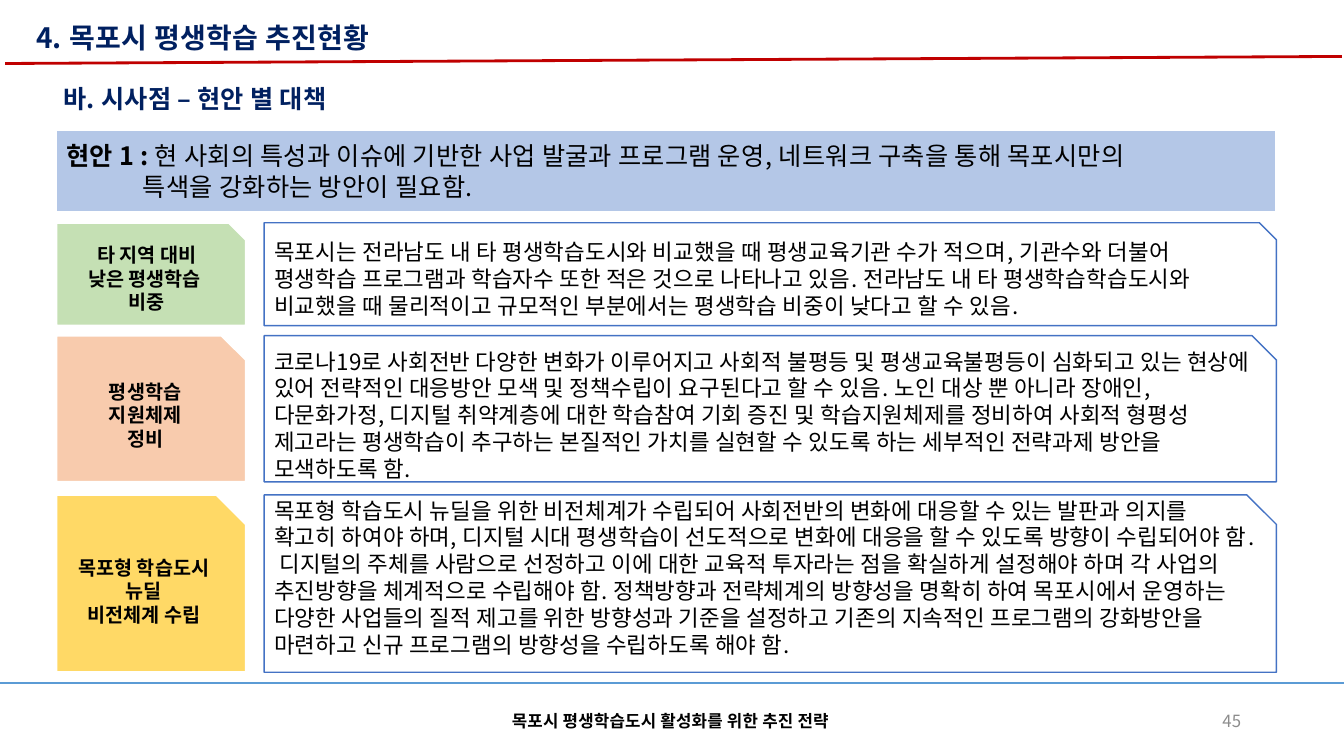
from dataclasses import dataclass

from lxml.etree import SubElement
from pptx import Presentation
from pptx.dml.color import RGBColor
from pptx.enum.shapes import MSO_CONNECTOR, MSO_SHAPE
from pptx.enum.text import MSO_ANCHOR as Anchor, PP_ALIGN as Align
from pptx.oxml.ns import qn
from pptx.slide import Slide
from pptx.text.text import TextFrame
from pptx.util import Pt

EMU_PER_PX = 9144


@dataclass(frozen=True)
class Theme:
    font: str = "Noto Sans CJK KR"
    black: str = "000000"
    white: str = "FFFFFF"
    navy: str = "002060"
    gray: str = "8C8C8C"
    red: str = "C00000"
    sky: str = "5B9BD5"
    outline: str = "4472C4"
    banner: str = "B4C7E7"
    green: str = "C5E0B4"
    peach: str = "F8CBAD"
    yellow: str = "FFD966"
    title: int = 20
    heading: int = 18
    body: int = 16
    label: int = 14
    footer: int = 12


THEME = Theme()


@dataclass(frozen=True)
class Box:
    left: int
    top: int
    width: int
    height: int

    def emu(self) -> tuple[int, int, int, int]:
        return px(self.left), px(self.top), px(self.width), px(self.height)


@dataclass(frozen=True)
class Style:
    size: int
    color: str = THEME.black
    bold: bool | None = False
    align: Align = Align.LEFT
    anchor: Anchor = Anchor.MIDDLE
    tracking: float = 1.15


@dataclass(frozen=True)
class Label:
    box: Box
    text: str
    style: Style


@dataclass(frozen=True)
class Rule:
    start: tuple[int, int]
    end: tuple[int, int]
    color: str
    width: float


@dataclass(frozen=True)
class Issue:
    top: int
    height: int
    fill: str
    label: tuple[str, ...]
    body: str
    bottom_inset: int = 5


def px(value: int) -> int:
    return value * EMU_PER_PX


def write(frame: TextFrame, lines: tuple[str, ...], style: Style) -> None:
    frame.word_wrap = True
    frame.vertical_anchor = style.anchor
    for index, line in enumerate(lines):
        paragraph = frame.paragraphs[0] if index == 0 else frame.add_paragraph()
        if line:
            paragraph.add_run().text = line
        paragraph.alignment = style.align
        font = paragraph.font
        font.name, font.size, font.bold = THEME.font, Pt(style.size), style.bold
        font.color.rgb = RGBColor.from_string(style.color)
        defaults = paragraph._p.pPr.find(qn("a:defRPr"))
        defaults.set("spc", str(round(style.size * style.tracking)))
        SubElement(defaults, qn("a:ea")).set("typeface", THEME.font)


def add_label(slide: Slide, label: Label) -> None:
    frame = slide.shapes.add_textbox(*label.box.emu()).text_frame
    write(frame, (label.text,), label.style)


def add_panel(slide: Slide, kind: MSO_SHAPE, box: Box, fill: str,
              line: str, width: float) -> TextFrame:
    shape = slide.shapes.add_shape(kind, *box.emu())
    shape.shadow.inherit = False
    shape.fill.solid()
    shape.fill.fore_color.rgb = RGBColor.from_string(fill)
    shape.line.color.rgb = RGBColor.from_string(line)
    shape.line.width = Pt(width)
    return shape.text_frame


def add_rule(slide: Slide, rule: Rule) -> None:
    ends = [px(value) for value in (*rule.start, *rule.end)]
    connector = slide.shapes.add_connector(MSO_CONNECTOR.STRAIGHT, *ends)
    connector.line.color.rgb = RGBColor.from_string(rule.color)
    connector.line.width = Pt(rule.width)
    SubElement(connector._element.spPr, qn("a:effectLst"))


def add_issue(slide: Slide, issue: Issue) -> None:
    kind = MSO_SHAPE.SNIP_1_RECTANGLE
    label = add_panel(slide, kind, Box(56, issue.top, 188, issue.height),
                      issue.fill, THEME.white, 1.5)
    write(label, issue.label,
          Style(THEME.label, bold=True, align=Align.CENTER, tracking=0))
    body = add_panel(slide, kind, Box(262, issue.top, 1004, issue.height),
                     THEME.white, THEME.outline, 1)
    body.margin_bottom = px(issue.bottom_inset)
    write(body, (issue.body,), Style(THEME.body))


def add_banner(slide: Slide) -> None:
    frame = add_panel(slide, MSO_SHAPE.RECTANGLE, Box(56, 129, 1210, 81),
                      THEME.banner, THEME.white, 1.5)
    write(frame, ("", "특색을 강화하는 방안이 필요함."), Style(THEME.heading, bold=None))
    first, second = frame.paragraphs
    for text, bold in BANNER_RUNS:
        run = first.add_run()
        run.text, run.font.bold = text, bold
    second._p.pPr.set("marL", str(px(76)))


RULES = (
    Rule((5, 63), (1331, 56), THEME.red, 2),
    Rule((0, 678), (1333, 678), THEME.sky, 1.5),
)
LABELS = (
    Label(Box(941, 695, 300, 40), "45",
          Style(THEME.footer, THEME.gray, align=Align.RIGHT)),
    Label(Box(442, 695, 450, 40), "목포시 평생학습도시 활성화를 위한 추진 전략 ",
          Style(THEME.footer, bold=True, align=Align.CENTER)),
    Label(Box(26, 15, 587, 44), "4. 목포시 평생학습 추진현황",
          Style(THEME.title, THEME.navy, True, anchor=Anchor.TOP)),
    Label(Box(53, 78, 587, 40), "바. 시사점 – 현안 별 대책",
          Style(THEME.heading, THEME.navy, True, anchor=Anchor.TOP)),
)
BANNER_RUNS = (
    ("현안 1 : ", True),
    ("현 사회의 특성과 이슈에 기반한 사업 발굴과 프로그램 운영, 네트워크 구축을 통해 목포시만의", False),
)
ISSUES = (
    Issue(221, 102, THEME.green, ("타 지역 대비", "낮은 평생학습 ", "비중"),
          "목포시는 전라남도 내 타 평생학습도시와 비교했을 때 평생교육기관 수가 적으며, 기관수와 더불어 "
          "평생학습 프로그램과 학습자수 또한 적은 것으로 나타나고 있음. 전라남도 내 타 평생학습학습도시와 "
          "비교했을 때 물리적이고 규모적인 부분에서는 평생학습 비중이 낮다고 할 수 있음."),
    Issue(333, 145, THEME.peach, ("평생학습", "지원체제", "정비"),
          "코로나19로 사회전반 다양한 변화가 이루어지고 사회적 불평등 및 평생교육불평등이 심화되고 있는 "
          "현상에 있어 전략적인 대응방안 모색 및 정책수립이 요구된다고 할 수 있음. 노인 대상 뿐 아니라 장애인, "
          "다문화가정, 디지털 취약계층에 대한 학습참여 기회 증진 및 학습지원체제를 정비하여 사회적 형평성 "
          "제고라는 평생학습이 추구하는 본질적인 가치를 실현할 수 있도록 하는 세부적인 전략과제 방안을 "
          "모색하도록 함."),
    Issue(491, 176, THEME.yellow, ("목포형 학습도시", "뉴딜", "비전체계 수립"),
          "목포형 학습도시 뉴딜을 위한 비전체계가 수립되어 사회전반의 변화에 대응할 수 있는 발판과 의지를 "
          "확고히 하여야 하며, 디지털 시대 평생학습이 선도적으로 변화에 대응을 할 수 있도록 방향이 수립되어야 "
          "함. 디지털의 주체를 사람으로 선정하고 이에 대한 교육적 투자라는 점을 확실하게 설정해야 하며 각 "
          "사업의 추진방향을 체계적으로 수립해야 함. 정책방향과 전략체계의 방향성을 명확히 하여 목포시에서 "
          "운영하는 다양한 사업들의 질적 제고를 위한 방향성과 기준을 설정하고 기존의 지속적인 프로그램의 "
          "강화방안을 마련하고 신규 프로그램의 방향성을 수립하도록 해야 함.", bottom_inset=32),
)


def main() -> None:
    presentation = Presentation()
    presentation.slide_width, presentation.slide_height = px(1333), px(750)
    slide = presentation.slides.add_slide(presentation.slide_layouts[6])
    for rule in RULES:
        add_rule(slide, rule)
    for label in LABELS:
        add_label(slide, label)
    for issue in ISSUES:
        add_issue(slide, issue)
    add_banner(slide)
    presentation.save("out.pptx")


if __name__ == "__main__":
    main()
